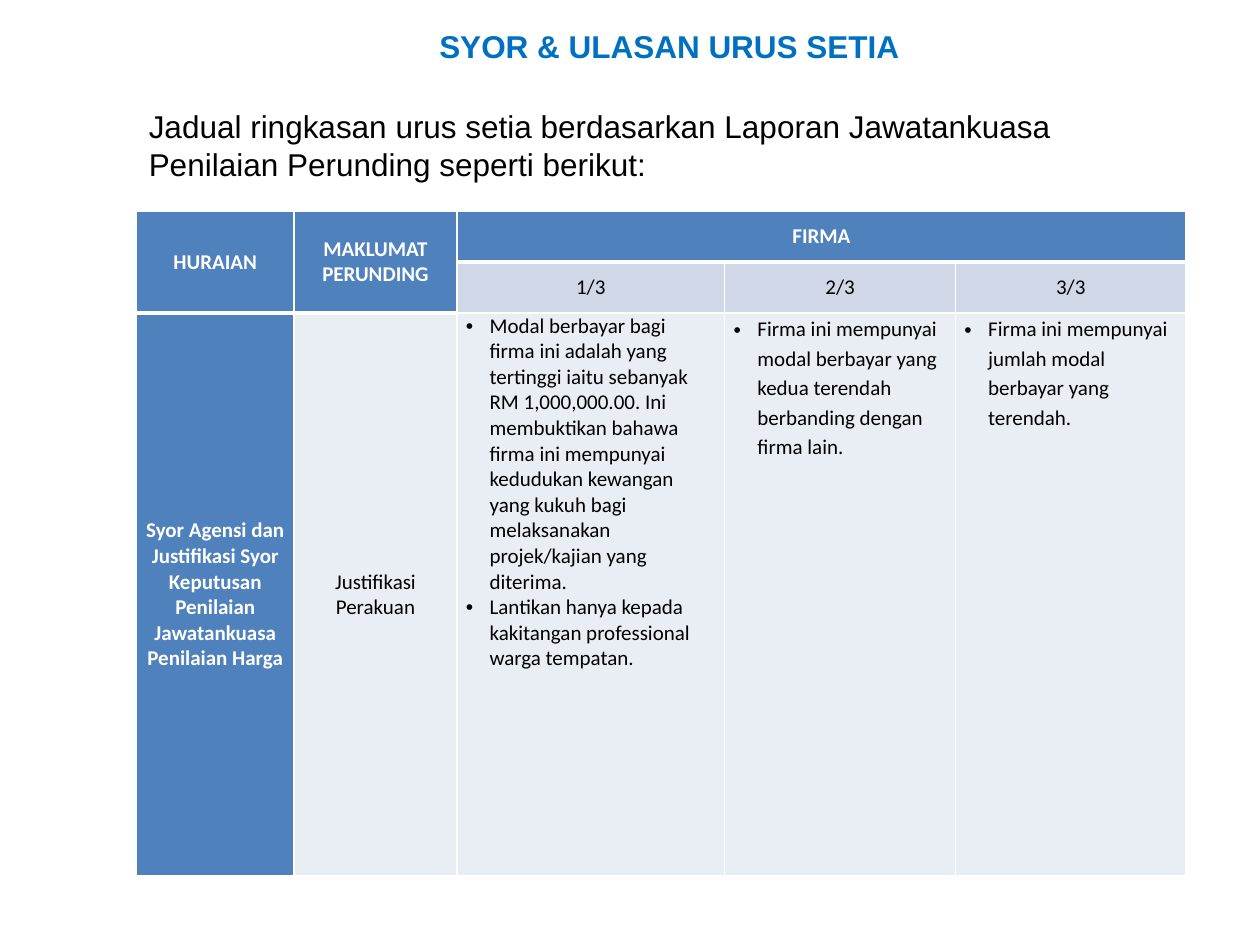
from lxml.etree import SubElement
from pptx import Presentation
from pptx.dml.color import RGBColor
from pptx.enum.text import MSO_ANCHOR as Anchor, PP_ALIGN as Align
from pptx.oxml.ns import qn
from pptx.util import Cm, Pt

BLUE, PALE, LIGHT = "4F81BD", "D0D8E8", "E9EDF4"
WHITE, BLACK = "FFFFFF", "000000"
COLUMN_WIDTHS = (3.18, 3.28, 5.4, 4.65, 4.65)
ROW_HEIGHTS = (1.03, 1.03, 11.35)
FIRM_NOTES = (
    (
        "Modal berbayar bagi firma ini adalah yang tertinggi iaitu sebanyak RM 1,000,000.00. "
        "Ini membuktikan bahawa firma ini mempunyai kedudukan kewangan yang kukuh bagi "
        "melaksanakan projek/kajian yang diterima.",
        "Lantikan hanya kepada kakitangan professional warga tempatan.",
    ),
    ("Firma ini mempunyai modal berbayar yang kedua terendah berbanding dengan firma lain.",),
    ("Firma ini mempunyai jumlah modal berbayar yang terendah.",),
)


def rgb(value):
    """Turn a hex string into a colour."""
    return RGBColor.from_string(value)


def style_text(para, name, size, color, bold=False):
    """Format every run of a paragraph."""
    for span in para.runs:
        font = span.font
        font.name, font.size, font.bold = name, Pt(size), bold
        font.color.rgb = rgb(color)


def set_borders(cell, bottom):
    """Give a cell white borders, with its own bottom width in points."""
    properties = cell._tc.get_or_add_tcPr()
    for side, width in (("L", 1), ("R", 1), ("T", 1), ("B", bottom)):
        line = SubElement(properties, qn(f"a:ln{side}"), w=str(Pt(width)))
        fill = SubElement(line, qn("a:solidFill"))
        SubElement(fill, qn("a:srgbClr"), val=WHITE)


def add_bullet(para):
    """Give a paragraph a hanging round bullet."""
    properties = para._p.get_or_add_pPr()
    indent = Cm(0.48)
    properties.set("marL", str(indent))
    properties.set("indent", str(-indent))
    SubElement(properties, qn("a:buFont"), typeface="Arial")
    SubElement(properties, qn("a:buChar"), char="•")


def fill_cell(cell, text, fill, color=BLACK, bold=False):
    """Fill a cell with centred text on a plain colour."""
    cell.fill.solid()
    cell.fill.fore_color.rgb = rgb(fill)
    cell.margin_left = cell.margin_right = Cm(0.18)
    cell.margin_top = cell.margin_bottom = 0
    cell.vertical_anchor = Anchor.MIDDLE
    cell.text_frame.text = text
    for para in cell.text_frame.paragraphs:
        para.alignment = Align.CENTER
        style_text(para, "Calibri", 12, color, bold)


def fill_notes(cell, notes, spacing):
    """Fill a cell with bulleted notes from the top."""
    fill_cell(cell, "\n".join(notes), LIGHT)
    cell.vertical_anchor = Anchor.TOP
    for para in cell.text_frame.paragraphs:
        add_bullet(para)
        para.alignment = Align.LEFT
        para.line_spacing = spacing


def add_summary_table(page):
    """Add the table that compares the three firms."""
    frame = page.shapes.add_table(
        len(ROW_HEIGHTS), len(COLUMN_WIDTHS), Cm(2.75), Cm(4.25),
        Cm(sum(COLUMN_WIDTHS)), Cm(sum(ROW_HEIGHTS)))
    table = frame.table
    table.first_row = table.horz_banding = False
    for column, width in zip(table.columns, COLUMN_WIDTHS):
        column.width = Cm(width)
    for row, height in zip(table.rows, ROW_HEIGHTS):
        row.height = Cm(height)
    for row in range(len(ROW_HEIGHTS)):
        for column in range(len(COLUMN_WIDTHS)):
            heading = row == 0 or (row == 1 and column < 2)
            set_borders(table.cell(row, column), 3 if heading else 1)
    for first, last in (((0, 0), (1, 0)), ((0, 1), (1, 1)), ((0, 2), (0, 4))):
        table.cell(*first).merge(table.cell(*last))

    for column, heading in enumerate(("HURAIAN", "MAKLUMAT PERUNDING", "FIRMA")):
        fill_cell(table.cell(0, column), heading, BLUE, WHITE, True)
    fill_cell(
        table.cell(2, 0),
        "Syor Agensi dan Justifikasi Syor\nKeputusan Penilaian Jawatankuasa Penilaian Harga",
        BLUE, WHITE, True)
    fill_cell(table.cell(2, 1), "Justifikasi Perakuan", LIGHT)
    for number, notes in enumerate(FIRM_NOTES, 1):
        fill_cell(table.cell(1, number + 1), f"{number}/3", PALE)
        fill_notes(table.cell(2, number + 1), notes, 1.0 if number == 1 else 1.15)


def add_heading(page):
    """Add the title and the sentence that introduces the table."""
    box = page.shapes.add_textbox(Cm(2.75), Cm(0.43), Cm(21.16), Cm(4.19))
    frame = box.text_frame
    frame.word_wrap = True
    frame.text = (
        "SYOR & ULASAN URUS SETIA\n"
        "Jadual ringkasan urus setia berdasarkan Laporan Jawatankuasa "
        "Penilaian Perunding seperti berikut:")
    title, intro = frame.paragraphs
    title.alignment = Align.CENTER
    title._p.get_or_add_pPr().set("marL", str(Cm(0.33)))
    style_text(title, "Arial", 18, "0070C0", True)
    intro.space_before = Pt(24)
    style_text(intro, "Arial", 18, BLACK)


def main():
    """Build the slide and save it."""
    deck = Presentation()
    deck.slide_width, deck.slide_height = Cm(25.4), Cm(19.05)
    page = deck.slides.add_slide(deck.slide_layouts[6])
    add_summary_table(page)
    add_heading(page)
    deck.save("out.pptx")


if __name__ == "__main__":
    main()
